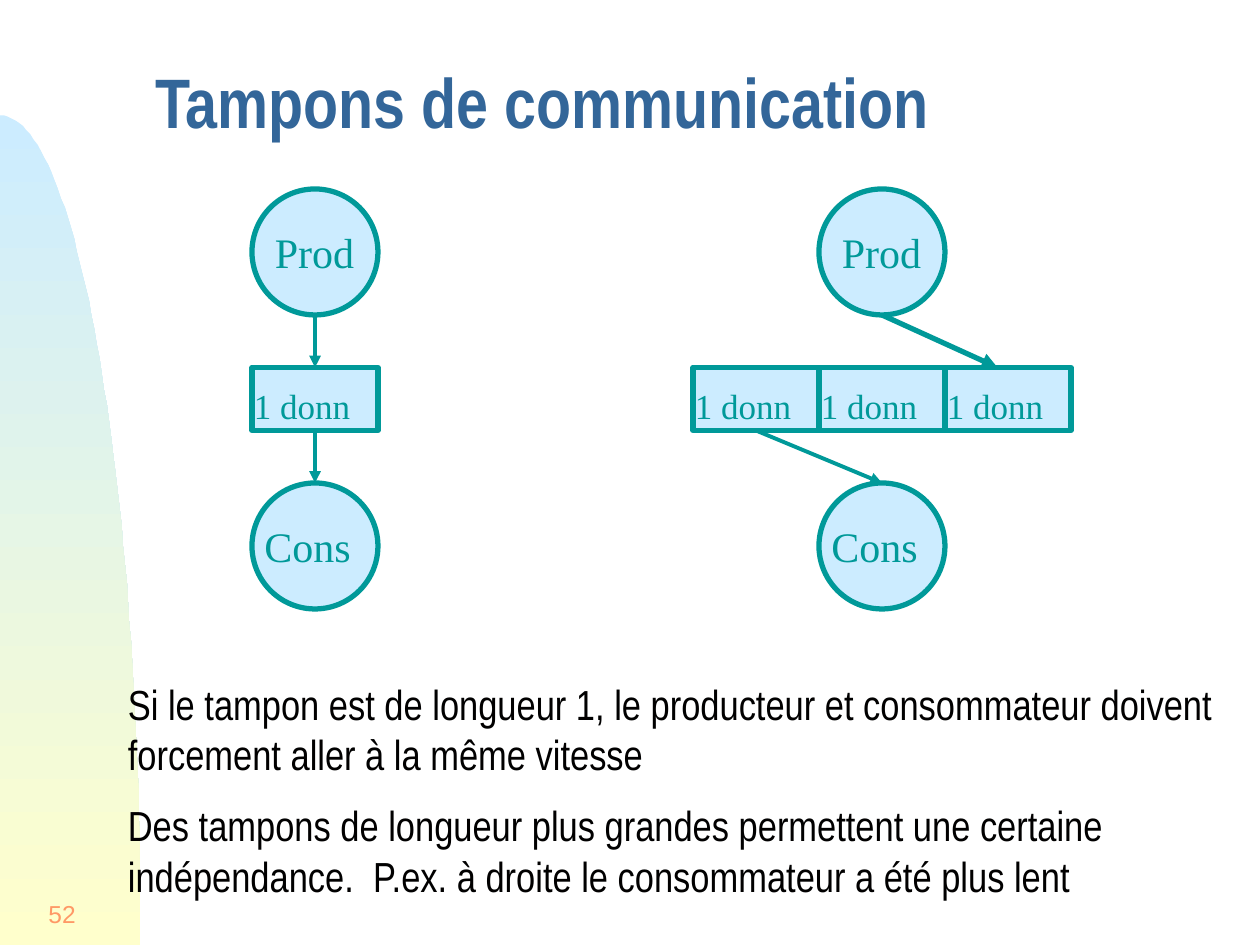
from dataclasses import dataclass

from lxml import etree
from pptx import Presentation
from pptx import util as u
from pptx.dml.color import RGBColor
from pptx.enum import shapes, text
from pptx.oxml.ns import qn

PX = 7620  # EMU per px, 120 px to the inch
WIDTH, HEIGHT = 1200, 900


@dataclass(frozen=True)
class Theme:
    title: str = "336699"
    body: str = "010000"
    number: str = "FF9966"
    diagram: str = "009999"
    pale_blue: str = "CCECFF"
    pale_yellow: str = "FFFFCC"
    title_font: str = "Arial Narrow"
    number_font: str = "Arial"
    label_font: str = "Times New Roman"
    title_size: int = 40
    body_size: int = 24
    slot_size: int = 20
    number_size: int = 14
    outline: float = 3
    thin_line: float = 2.25


def px(*lengths):
    return [u.Emu(length * PX) for length in lengths]


def rgb(value):
    return RGBColor.from_string(value)


class SlideBuilder:
    def __init__(self, slide, theme):
        self.slide = slide
        self.theme = theme

    def text(self, box, paragraphs, font, size, color, bold=False, wrap=True,
             anchor=text.MSO_ANCHOR.TOP, align=text.PP_ALIGN.LEFT,
             line_spacing=None, gap=0, grow=False):
        """Add a text box; gap is the space in points between paragraphs."""
        frame = self.slide.shapes.add_textbox(*px(*box)).text_frame
        frame.word_wrap = wrap
        frame.vertical_anchor = anchor
        if grow:
            frame.auto_size = text.MSO_AUTO_SIZE.SHAPE_TO_FIT_TEXT
        frame.text = "\n".join(paragraphs)
        for index, paragraph in enumerate(frame.paragraphs):
            paragraph.alignment = align
            paragraph.line_spacing = line_spacing
            paragraph.space_before = u.Pt(gap if index else 0)
            paragraph.font.name = font
            paragraph.font.size = u.Pt(size)
            paragraph.font.bold = bold
            paragraph.font.color.rgb = rgb(color)

    def label(self, box, words, size):
        self.text(box, [words], self.theme.label_font, size,
                  self.theme.diagram, grow=True)

    def outlined(self, kind, box):
        shape = self.slide.shapes.add_shape(kind, *px(*box))
        shape.shadow.inherit = False
        shape.fill.solid()
        shape.fill.fore_color.rgb = rgb(self.theme.pale_blue)
        shape.line.color.rgb = rgb(self.theme.diagram)
        shape.line.width = u.Pt(self.theme.outline)

    def process(self, left, top, words, indent=0):
        """Add a circle for a producer or a consumer."""
        self.outlined(shapes.MSO_SHAPE.OVAL, (left, top, 120, 120))
        self.label((left + indent, top + 30, 110, 60), words,
                   self.theme.body_size)

    def buffer_slot(self, left):
        self.outlined(shapes.MSO_SHAPE.RECTANGLE, (left, 350, 120, 60))
        self.label((left - 10, 360, 130, 52), "1 donn", self.theme.slot_size)

    def arrow(self, start, end, width):
        connector = self.slide.shapes.add_connector(
            shapes.MSO_CONNECTOR.STRAIGHT, *px(*start, *end))
        connector.line.color.rgb = rgb(self.theme.diagram)
        connector.line.width = u.Pt(width)
        line = connector.line._get_or_add_ln()
        etree.SubElement(line, qn("a:tailEnd"), type="triangle")
        etree.SubElement(connector._element.spPr, qn("a:effectLst"))

    def curved_band(self, top, width, steps=60):
        """Add the quarter-oval gradient band on the left edge."""
        control = ((0, top), (74, top), (width, 464), (width, HEIGHT))
        points = []
        for step in range(1, steps + 1):
            t = step / steps
            weights = ((1 - t) ** 3, 3 * t * (1 - t) ** 2,
                       3 * t * t * (1 - t), t ** 3)
            points.append(tuple(
                sum(w * point[axis] for w, point in zip(weights, control))
                for axis in (0, 1)))
        builder = self.slide.shapes.build_freeform(0, top, scale=PX)
        builder.add_line_segments(points + [(0, HEIGHT)], close=True)
        band = builder.convert_to_shape()
        band.shadow.inherit = False
        band.line.fill.background()
        band.fill.gradient()
        band.fill.gradient_angle = 270
        colors = (self.theme.pale_blue, self.theme.pale_yellow)
        for position, (stop, color) in enumerate(
                zip(band.fill.gradient_stops, colors)):
            stop.position = position
            stop.color.rgb = rgb(color)

    def exchange(self, left, slots, write_to, read_from, write_width):
        """Add a producer and a consumer joined by a row of buffer slots."""
        center = left + 60
        self.process(left, 180, "Prod", indent=10)
        self.process(left, 460, "Cons")
        for slot in slots:
            self.buffer_slot(left + slot * 120)
        self.arrow((center, 300), (write_to, 350), write_width)
        self.arrow((read_from, 410), (center, 460), self.theme.thin_line)


def main():
    presentation = Presentation()
    presentation.slide_width, presentation.slide_height = px(WIDTH, HEIGHT)
    slide = presentation.slides.add_slide(presentation.slide_layouts[6])
    theme = Theme()
    builder = SlideBuilder(slide, theme)

    builder.curved_band(top=110, width=134)
    builder.text((0, 840, 84, 60), ["52"], theme.number_font,
                 theme.number_size, theme.number, wrap=False,
                 anchor=text.MSO_ANCHOR.MIDDLE, align=text.PP_ALIGN.RIGHT)
    builder.text((136, 43, 1034, 126), ["Tampons de communication"],
                 theme.title_font, theme.title_size, theme.title, bold=True,
                 anchor=text.MSO_ANCHOR.MIDDLE, line_spacing=0.7)

    builder.exchange(240, slots=[0], write_to=300, read_from=300,
                     write_width=theme.thin_line)
    builder.exchange(780, slots=[0, 1, -1], write_to=950, read_from=720,
                     write_width=theme.outline)

    builder.text((110, 640, 1060, 228), [
        "Si le tampon est de longueur 1, le producteur et consommateur "
        "doivent forcement aller à la même vitesse",
        "Des tampons de longueur plus grandes permettent une certaine "
        "indépendance.  P.ex. à droite le consommateur a été plus lent",
    ], theme.title_font, theme.body_size, theme.body, gap=12, grow=True)

    presentation.save("out.pptx")


if __name__ == "__main__":
    main()
